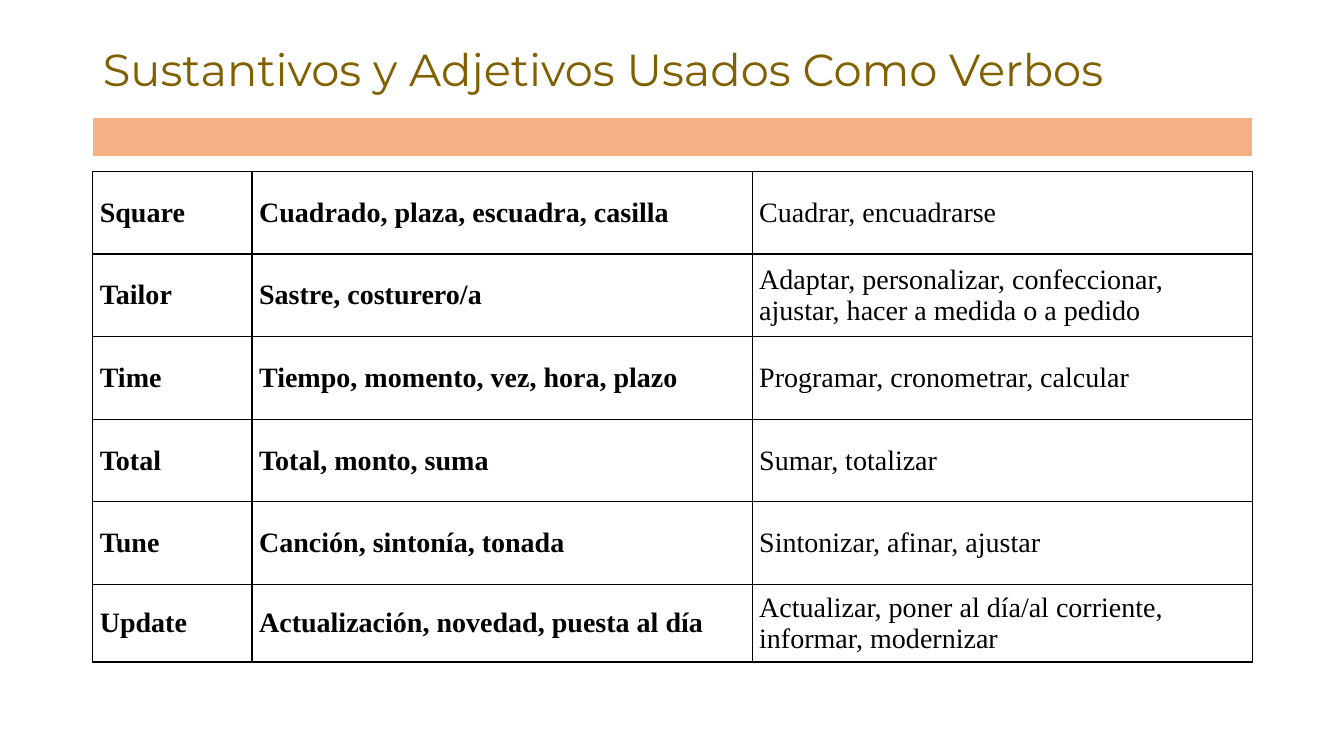
from lxml import etree
from pptx import Presentation
from pptx.dml.color import RGBColor
from pptx.enum.text import MSO_ANCHOR, MSO_AUTO_SIZE, PP_ALIGN
from pptx.oxml.ns import qn
from pptx.util import Inches, Pt

MIDDLE = MSO_ANCHOR.MIDDLE
NO_FIT = MSO_AUTO_SIZE.NONE
LEFT = PP_ALIGN.LEFT
COLORS = {"title": "806000", "band": "F4B183", "text": "000000",
          "grid": "000000", "paper": "FFFFFF"}
TITLE = "Sustantivos y Adjetivos Usados Como Verbos"
WORDS = [
    ("Square", "Cuadrado, plaza, escuadra, casilla", "Cuadrar, encuadrarse"),
    ("Tailor", "Sastre, costurero/a",
     "Adaptar, personalizar, confeccionar, ajustar, hacer a medida o a pedido"),
    ("Time", "Tiempo, momento, vez, hora, plazo", "Programar, cronometrar, calcular"),
    ("Total", "Total, monto, suma", "Sumar, totalizar"),
    ("Tune", "Canción, sintonía, tonada", "Sintonizar, afinar, ajustar"),
    ("Update", "Actualización, novedad, puesta al día",
     "Actualizar, poner al día/al corriente, informar, modernizar"),
]


def add_run(p, text, font, size, color, bold=False):
    """Add one formatted run to a paragraph."""
    r = p.add_run()
    r.text = text
    r.font.name = font
    r.font.size = Pt(size)
    r.font.bold = bold
    r.font.color.rgb = RGBColor.from_string(COLORS[color])


def style_cell(cell, fill, border, widths):
    """Fill a cell and draw its left, right, top and bottom borders."""
    cell.fill.solid()
    cell.fill.fore_color.rgb = RGBColor.from_string(COLORS[fill])
    props = cell._tc.get_or_add_tcPr()
    for i, (side, width) in enumerate(zip("LRTB", widths)):
        line = etree.Element(qn(f"a:ln{side}"), w=str(Pt(width)))
        solid = etree.SubElement(line, qn("a:solidFill"))
        etree.SubElement(solid, qn("a:srgbClr"), val=COLORS[border])
        props.insert(i, line)


def add_grid(slide, x, y, cols, rows):
    """Add a table with the given column widths and row heights."""
    table = slide.shapes.add_table(
        len(rows), len(cols), Inches(x), Inches(y),
        Inches(sum(cols)), Inches(sum(rows))).table
    table.first_row = table.horz_banding = False
    for col, width in zip(table.columns, cols):
        col.width = Inches(width)
    for row, height in zip(table.rows, rows):
        row.height = Inches(height)
    return table


def set_title(slide, x, y, w, h):
    """Place the title in its box."""
    sp = slide.shapes.title
    sp.left, sp.top, sp.width, sp.height = map(Inches, (x, y, w, h))
    tf = sp.text_frame
    tf.word_wrap = True
    tf.auto_size = NO_FIT
    tf.vertical_anchor = MIDDLE
    p = tf.paragraphs[0]
    p.alignment = LEFT
    p.line_spacing = 0.9
    add_run(p, TITLE, "Montserrat", 32, "title")


def add_band(slide, x, y, w, h):
    """Add the coloured one-cell band."""
    table = add_grid(slide, x, y, [w], [h])
    style_cell(table.cell(0, 0), "band", "paper", (1, 1, 1, 3))


def add_words(slide, x, y, w, h):
    """Add the word table: term, meanings in bold, verbs in regular."""
    term_w, row_h = 1.58, 0.82
    verb_w = (w - term_w) / 2
    last_h = h - row_h * (len(WORDS) - 1)
    rows = [row_h] * (len(WORDS) - 1) + [last_h]
    table = add_grid(slide, x, y, [term_w, verb_w, verb_w], rows)
    for i, entry in enumerate(WORDS):
        for j, text in enumerate(entry):
            cell = table.cell(i, j)
            cell.vertical_anchor = MIDDLE
            cell.margin_left = cell.margin_right = Inches(0.07)
            cell.margin_top = cell.margin_bottom = 0
            style_cell(cell, "paper", "grid", (1, 1, 1, 1))
            add_run(cell.text_frame.paragraphs[0], text,
                    "Times New Roman", 20, "text", j < 2)


def main():
    """Build and save the slide."""
    prs = Presentation()
    prs.slide_width, prs.slide_height = Inches(13.33), Inches(7.5)
    s = prs.slides.add_slide(prs.slide_layouts[5])
    x, w = 0.92, 11.5
    set_title(s, x, 0.4, w, 0.63)
    add_band(s, x, 1.16, w, 0.41)
    add_words(s, x, 1.7, w, 4.87)
    prs.save("out.pptx")


if __name__ == "__main__":
    main()
